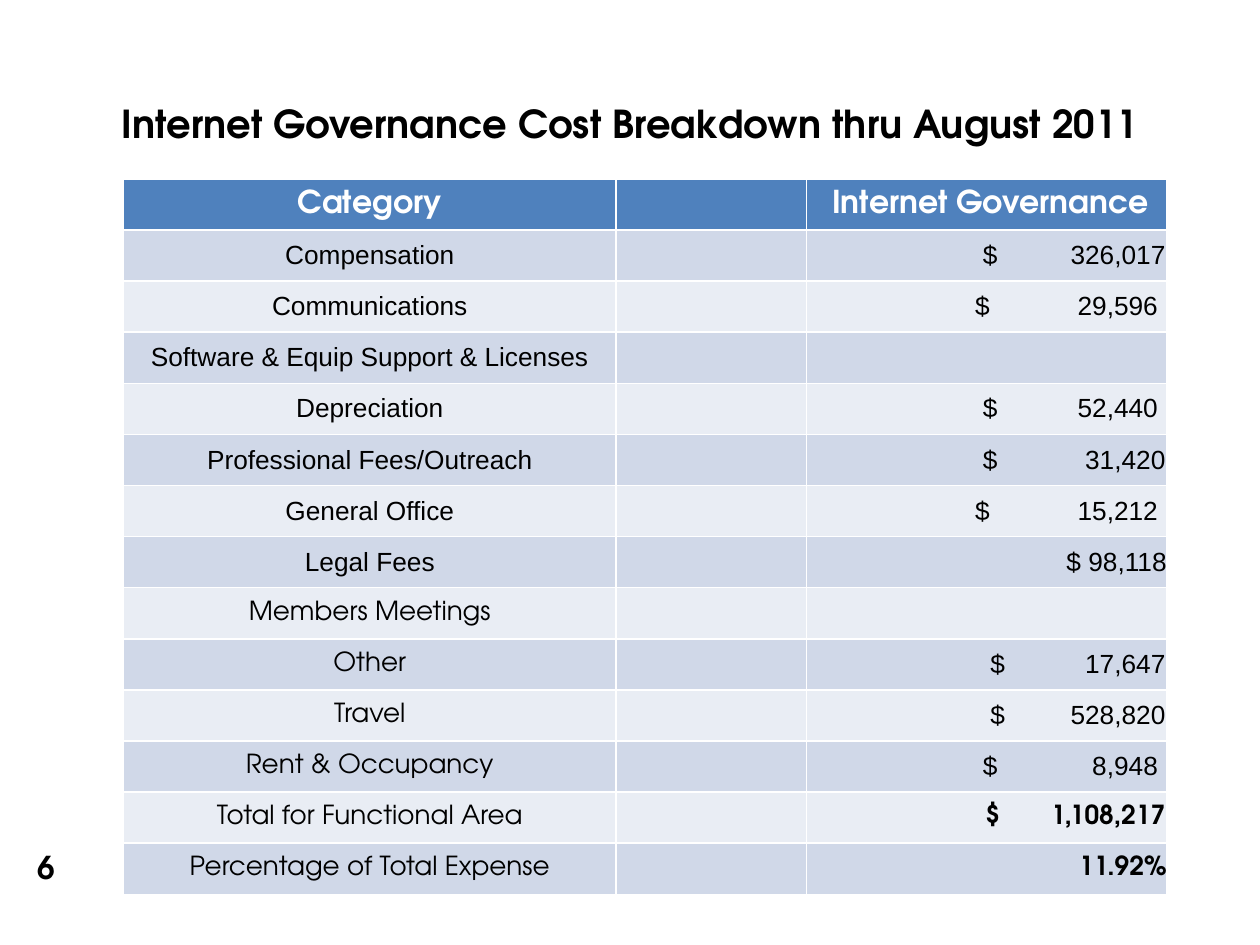
from dataclasses import dataclass

from lxml import etree
from pptx import Presentation
from pptx.dml.color import RGBColor
from pptx.enum.text import MSO_ANCHOR, PP_ALIGN
from pptx.oxml.ns import qn
from pptx.util import Inches, Pt

MIDDLE, TOP = MSO_ANCHOR.MIDDLE, MSO_ANCHOR.TOP
LEFT, CENTER, RIGHT = PP_ALIGN.LEFT, PP_ALIGN.CENTER, PP_ALIGN.RIGHT


@dataclass(frozen=True)
class Theme:
    display: str = "TeX Gyre Adventor"
    body: str = "Arial"
    ink: str = "000000"
    white: str = "FFFFFF"
    header: str = "4F81BD"
    bands: tuple = ("D0D8E8", "E9EDF4")
    title_size: int = 22
    header_size: int = 18
    body_size: int = 15


THEME = Theme()
COLUMN_WIDTHS = (3.91, 1.51, 2.86)
ROW_HEIGHT = 5.68 / 14
EDGE, INSET_EDGE = 2.85, 2.79

# Category, category font, amount, dollar sign position, right edge of amount
COSTS = (
    ("Compensation", THEME.body, "326,017", 1.4, EDGE),
    ("Communications", THEME.body, "29,596", 1.34, INSET_EDGE),
    ("Software & Equip Support & Licenses", THEME.body, "", 0, 0),
    ("Depreciation", THEME.body, "52,440", 1.4, INSET_EDGE),
    ("Professional Fees/Outreach", THEME.body, "31,420", 1.4, EDGE),
    ("General Office", THEME.body, "15,212", 1.34, INSET_EDGE),
    ("Legal Fees", THEME.body, "$ 98,118", 0, 0),
    ("Members Meetings", THEME.display, "", 0, 0),
    ("Other", THEME.display, "17,647", 1.46, EDGE),
    ("Travel", THEME.display, "528,820", 1.46, EDGE),
    ("Rent & Occupancy", THEME.display, "8,948", 1.4, INSET_EDGE),
    ("Total for Functional Area", THEME.display, "1,108,217", 1.42, EDGE),
    ("Percentage of Total Expense", THEME.display, "11.92%", 0, 0),
)
SUMMARY_ROWS = 2


def add_tabs(para, stops):
    tabs = etree.SubElement(para._p.get_or_add_pPr(), qn("a:tabLst"))
    for position, alignment in stops:
        etree.SubElement(tabs, qn("a:tab"), pos=str(Inches(position)), algn=alignment)


def style_paragraph(para, size, font, color=THEME.ink, bold=False, align=LEFT):
    para.alignment = align
    para.font.size = Pt(size)
    para.font.name = font
    para.font.bold = bold
    para.font.color.rgb = RGBColor.from_string(color)


def add_text(page, text, bounds, size, anchor, align, wrap):
    box = page.shapes.add_textbox(*map(Inches, bounds))
    frame = box.text_frame
    frame.word_wrap = wrap
    frame.vertical_anchor = anchor
    para = frame.paragraphs[0]
    para.text = text
    style_paragraph(para, size, THEME.display, bold=True, align=align)


def prepare_cell(cell, fill):
    cell.fill.solid()
    cell.fill.fore_color.rgb = RGBColor.from_string(fill)
    cell.vertical_anchor = MIDDLE
    cell.margin_left = cell.margin_right = cell.margin_top = cell.margin_bottom = 0


def fill_amount(cell, amount, dollar, edge, font, bold):
    para = cell.text_frame.paragraphs[0]
    if dollar:
        para.text = f"\t$\t{amount}"
        add_tabs(para, ((dollar, "l"), (edge, "r")))
    else:
        para.text = amount
    style_paragraph(para, THEME.body_size, font, bold=bold,
                    align=LEFT if dollar else RIGHT)


def add_cost_table(page):
    row_count = len(COSTS) + 1
    table = page.shapes.add_table(
        row_count, len(COLUMN_WIDTHS), Inches(0.98), Inches(1.42),
        Inches(sum(COLUMN_WIDTHS)), Inches(ROW_HEIGHT * row_count)).table
    for column, width in zip(table.columns, COLUMN_WIDTHS):
        column.width = Inches(width)
    for index, row in enumerate(table.rows):
        row.height = Inches(ROW_HEIGHT)
        fill = THEME.bands[(index - 1) % 2] if index else THEME.header
        for cell in row.cells:
            prepare_cell(cell, fill)

    for column, heading in ((0, "Category"), (2, "Internet Governance")):
        para = table.cell(0, column).text_frame.paragraphs[0]
        para.text = heading
        style_paragraph(para, THEME.header_size, THEME.display, THEME.white, True, CENTER)
    table.cell(0, 2).margin_left = Inches(0.06)

    for index, (category, font, amount, dollar, edge) in enumerate(COSTS, 1):
        para = table.cell(index, 0).text_frame.paragraphs[0]
        para.text = category
        style_paragraph(para, THEME.body_size, font, align=CENTER)
        if amount:
            summary = index > len(COSTS) - SUMMARY_ROWS
            fill_amount(table.cell(index, 2), amount, dollar, edge,
                        THEME.display if summary else THEME.body, summary)


def main():
    deck = Presentation()
    deck.slide_width, deck.slide_height = Inches(10), Inches(7.5)
    page = deck.slides.add_slide(deck.slide_layouts[6])
    add_cost_table(page)
    add_text(page, "Internet Governance Cost Breakdown thru August 2011",
             (0, 0.46, 10, 1.04), THEME.title_size, MIDDLE, CENTER, True)
    add_text(page, "6", (0.2, 6.68, 0.34, 0.4), THEME.header_size, TOP, LEFT, False)
    deck.save("out.pptx")


if __name__ == "__main__":
    main()
